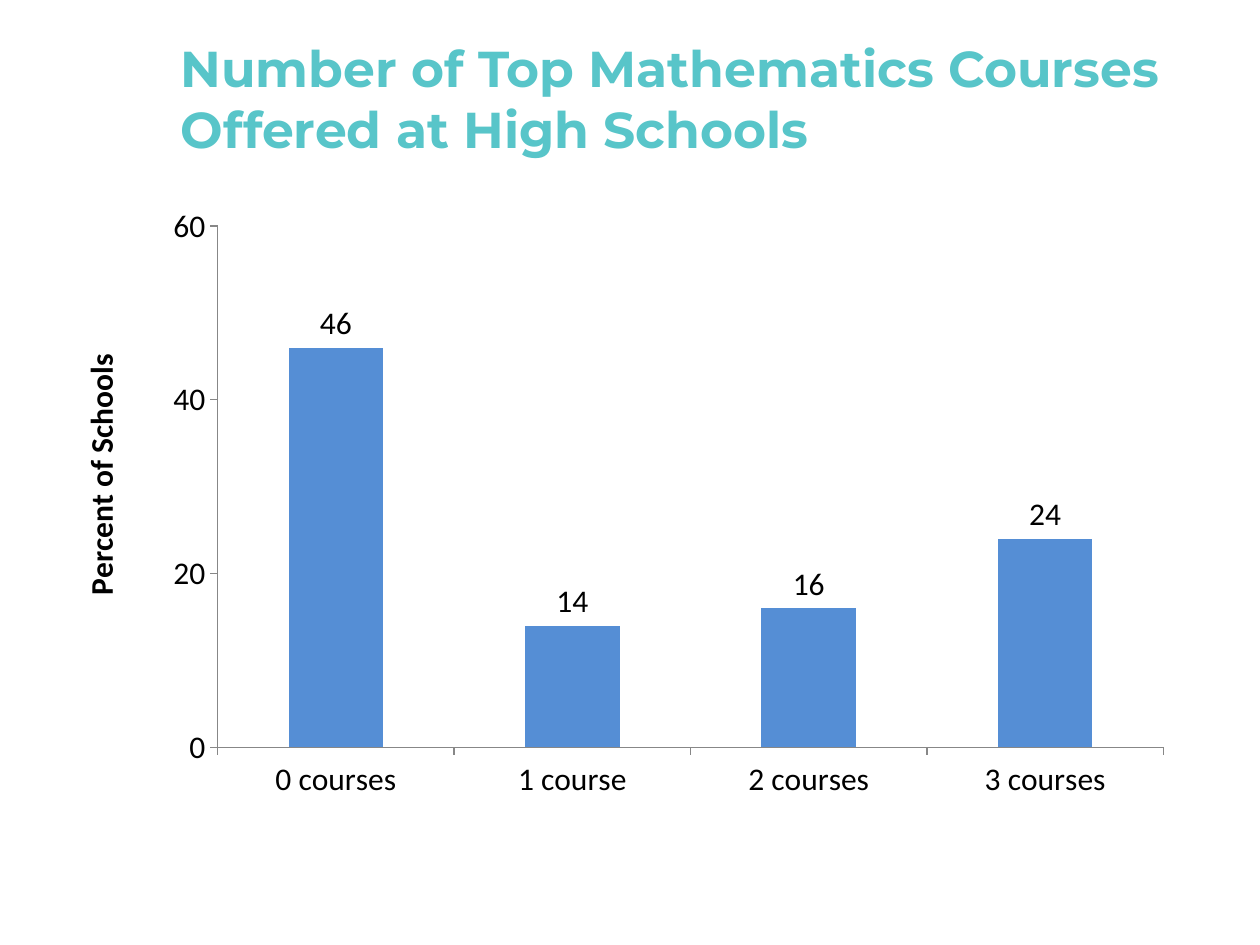
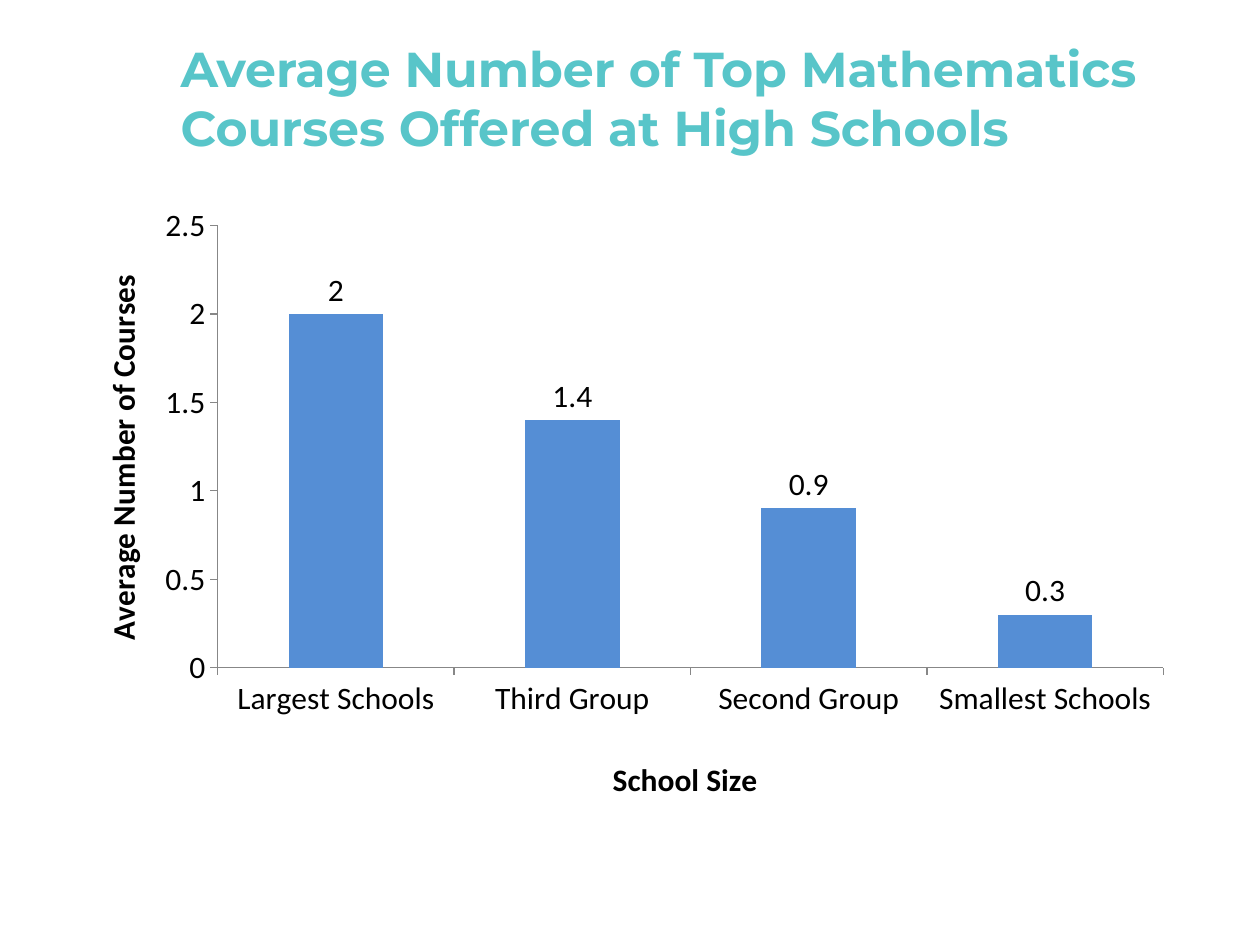
"""Build two slides that chart top mathematics courses offered at high schools."""
from lxml.etree import SubElement as Sub
from pptx import Presentation as Deck
from pptx.chart.data import CategoryChartData as Data
from pptx.dml.color import RGBColor
from pptx.enum.chart import XL_CHART_TYPE as Kind, XL_LABEL_POSITION as Spot, XL_TICK_MARK as Tick
from pptx.enum.text import MSO_ANCHOR as Anchor, MSO_AUTO_SIZE as Auto, PP_ALIGN as Align
from pptx.oxml.ns import qn
from pptx.util import Pt


def color(code):
    return RGBColor.from_string(code)


def style(font, face, size, code, bold=False):
    font.name, font.size, font.bold = face, Pt(size), bold
    font.color.rgb = color(code)


def write(frame, text, align=None, **look):
    frame.text = text
    part = frame.paragraphs[0]
    part.alignment = align
    style(part.runs[0].font, **look)


def place(node, **spots):
    tag = qn("c:layout")
    old = node.find(tag)
    if old is None:
        old = node.makeelement(tag)
        node.insert(0, old)
    box = Sub(old, qn("c:manualLayout"))
    if "w" in spots:
        Sub(box, qn("c:layoutTarget"), val="inner")
    for side in "xy":
        Sub(box, qn(f"c:{side}Mode"), val="edge")
    for side, size in spots.items():
        Sub(box, qn(f"c:{side}"), val=str(size))


class Show:
    teal, blue, gray, ink = "58C5C9", "558ED5", "878787", "000000"
    head, body = "Montserrat", "Calibri"

    def __init__(self):
        self.deck = Deck()
        self.deck.slide_width, self.deck.slide_height = Pt(720), Pt(540)

    def page(self, title, size):
        self.slide = self.deck.slides.add_slide(self.deck.slide_layouts[5])
        box = self.slide.shapes.title
        box.left, box.top, box.width, box.height = Pt(96), Pt(21.6), Pt(588), Pt(68.4)
        frame = box.text_frame
        frame.word_wrap, frame.auto_size = True, Auto.NONE
        frame.vertical_anchor = Anchor.MIDDLE
        write(frame, title, Align.LEFT, face=self.head, size=size, code=self.teal, bold=True)

    def axis(self, axis, name=None, spot=None):
        axis.has_major_gridlines = False
        axis.major_tick_mark, axis.minor_tick_mark = Tick.OUTSIDE, Tick.NONE
        axis.format.line.color.rgb = color(self.gray)
        axis.format.line.width = Pt(0.75)
        axis.has_title = bool(name)
        if name:
            title = axis.axis_title
            write(title.text_frame, name, face=self.body, size=18, code=self.ink, bold=True)
            place(title._element, x=spot[0], y=spot[1])

    def bars(self, rows, top, step, tall, rise, run=()):
        data = Data()
        data.categories = list(rows)
        data.add_series("Series 1", list(rows.values()))
        frame = self.slide.shapes.add_chart(
            Kind.COLUMN_CLUSTERED, Pt(41.76), Pt(111.6), Pt(635.76), Pt(350.64), data)
        chart = frame.chart
        chart.has_legend = chart.has_title = False
        style(chart.font, self.body, 18, self.ink)
        self.axis(chart.category_axis, *run)
        scale = chart.value_axis
        self.axis(scale, *rise)
        scale.minimum_scale, scale.maximum_scale, scale.major_unit = 0, top, step
        plot = chart.plots[0]
        plot.gap_width, plot.vary_by_categories = 150, False
        fill = plot.series[0].format.fill
        fill.solid()
        fill.fore_color.rgb = color(self.blue)
        plot.has_data_labels = True
        labels = plot.data_labels
        labels.show_value, labels.position = True, Spot.OUTSIDE_END
        style(labels.font, self.body, 18, self.ink)
        area = chart._chartSpace.find(".//" + qn("c:plotArea"))
        place(area, x=0.13, y=0.05, w=0.85, h=tall)


def main():
    show = Show()
    show.page("Number of Top Mathematics Courses Offered at High Schools", 28.8)
    show.bars({"0 courses": 46, "1 course": 14, "2 courses": 16, "3 courses": 24},
              60, 20, 0.85, ("Percent of Schools", (0, 0.25)))
    show.page("Average Number of Top Mathematics Courses Offered at High Schools", 28)
    show.bars({"Largest Schools": 2, "Third Group": 1.4, "Second Group": 0.9,
               "Smallest Schools": 0.3},
              2.5, 0.5, 0.73, ("Average Number of Courses", (0.02, 0.13)),
              ("School Size", (0.48, 0.92)))
    show.deck.save("out.pptx")


if __name__ == "__main__":
    main()
